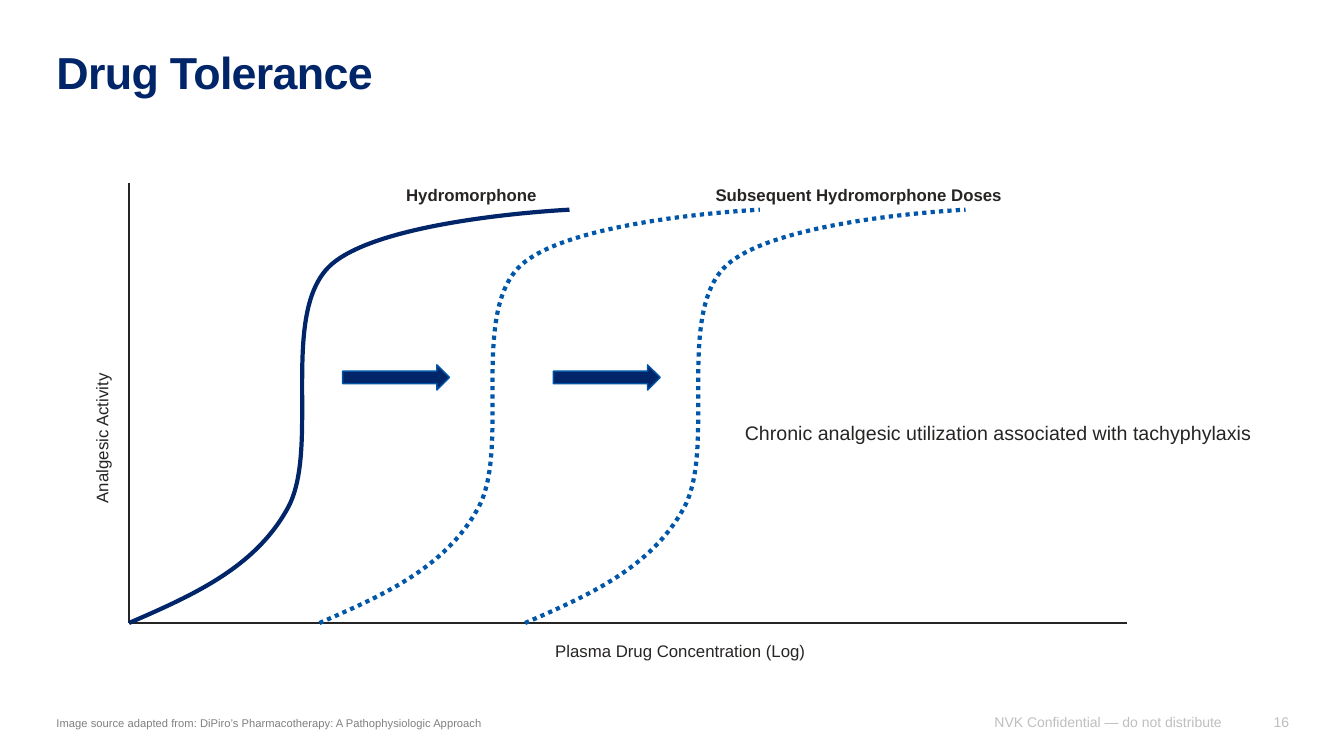
from dataclasses import dataclass

from pptx import Presentation
from pptx.dml.color import RGBColor
from pptx.enum.dml import MSO_LINE
from pptx.enum.shapes import MSO_CONNECTOR, MSO_SHAPE
from pptx.enum.text import MSO_ANCHOR, MSO_AUTO_SIZE, PP_ALIGN
from pptx.oxml.ns import qn
from pptx.oxml.xmlchemy import OxmlElement
from pptx.util import Pt

STRAIGHT = MSO_CONNECTOR.STRAIGHT
RIGHT_ARROW = MSO_SHAPE.RIGHT_ARROW
DOTTED = MSO_LINE.ROUND_DOT
TOP, BOTTOM = MSO_ANCHOR.TOP, MSO_ANCHOR.BOTTOM
LEFT, RIGHT = PP_ALIGN.LEFT, PP_ALIGN.RIGHT
NO_AUTOFIT = MSO_AUTO_SIZE.NONE


@dataclass(frozen=True)
class Theme:
    font: str = "Arial"
    navy: RGBColor = RGBColor(0x00, 0x25, 0x69)
    blue: RGBColor = RGBColor(0x00, 0x56, 0xA8)
    arrow_edge: RGBColor = RGBColor(0x00, 0x55, 0xA6)
    ink: RGBColor = RGBColor(0x27, 0x25, 0x24)
    source_gray: RGBColor = RGBColor(0x80, 0x80, 0x80)
    footer_gray: RGBColor = RGBColor(0xBF, 0xBF, 0xBF)
    title_size: int = 32
    message_size: int = 14
    label_size: int = 12
    footer_size: int = 10
    source_size: int = 8


THEME = Theme()
ORIGIN_X, BASE_Y = 92.2, 445
AXIS_TOP, AXIS_RIGHT = 131, 805
CURVE_CONTROLS = [
    (44.6, -19.4), (89.3, -38.9), (113, -81.4),
    (136.8, -123.1), (108, -217.4), (141.8, -253.4),
    (175, -288.7), (314.6, -295.2), (314.6, -295.2),
]


def place(shape, left, top, width, height):
    shape.left, shape.top = Pt(left), Pt(top)
    shape.width, shape.height = Pt(width), Pt(height)


def set_text(shape, text, size, color, bold=False, align=LEFT):
    shape.text_frame.text = text
    paragraph = shape.text_frame.paragraphs[0]
    paragraph.alignment = align
    font = paragraph.runs[0].font
    font.name, font.size, font.bold = THEME.font, Pt(size), bold
    font.color.rgb = color
    return paragraph


def fit_frame(shape, anchor):
    frame = shape.text_frame
    frame.word_wrap = True
    frame.auto_size = NO_AUTOFIT
    frame.vertical_anchor = anchor
    frame.margin_left = frame.margin_top = 0
    frame.margin_right = frame.margin_bottom = 0


def fill_title(title, text):
    place(title, 40.3, 36, 880.6, 44)
    fit_frame(title, TOP)
    paragraph = set_text(title, text, THEME.title_size, THEME.navy, bold=True)
    paragraph.line_spacing = 0.9
    paragraph.runs[0].font._element.set("spc", "-50")


def fill_source(body, text):
    place(body, 40.3, 502, 349.2, 19.4)
    fit_frame(body, BOTTOM)
    body.text_frame.text = text
    properties = body.text_frame.paragraphs[0]._p.get_or_add_pPr()
    properties.set("marL", "0")
    properties.set("indent", "0")
    properties.append(OxmlElement("a:buNone"))
    paragraph = body.text_frame.paragraphs[0]
    paragraph.space_before, paragraph.space_after = Pt(0), Pt(6)
    paragraph.alignment = LEFT
    font = paragraph.runs[0].font
    font.name, font.size = THEME.font, Pt(THEME.source_size)
    font.color.rgb = THEME.source_gray


def add_footer(slide, text, left, width):
    footer = slide.shapes.add_textbox(Pt(left), Pt(502.6), Pt(width), Pt(19.4))
    fit_frame(footer, BOTTOM)
    set_text(footer, text, THEME.footer_size, THEME.footer_gray, align=RIGHT)


def add_label(slide, text, left, top, width, size=THEME.label_size,
              bold=False, rotation=0):
    label = slide.shapes.add_textbox(
        Pt(left), Pt(top), Pt(width), Pt(size * 1.2 + 7.2))
    label.text_frame.word_wrap = True
    label.rotation = rotation
    set_text(label, text, size, THEME.ink, bold)


def add_axis(slide, end_x, end_y):
    axis = slide.shapes.add_connector(
        STRAIGHT, Pt(ORIGIN_X), Pt(BASE_Y), Pt(end_x), Pt(end_y))
    axis.line.color.rgb = THEME.ink
    axis.line.width = Pt(1.5)
    axis._element.spPr.append(OxmlElement("a:effectLst"))


def add_dose_curve(slide, start_x, color, dash=None):
    builder = slide.shapes.build_freeform(Pt(start_x), Pt(BASE_Y))
    builder.add_line_segments(
        [(Pt(start_x + dx), Pt(BASE_Y + dy)) for dx, dy in CURVE_CONTROLS],
        close=False)
    curve = builder.convert_to_shape()
    segments = list(curve._element.iter(qn("a:lnTo")))
    for first in range(0, len(segments), 3):
        bezier = OxmlElement("a:cubicBezTo")
        segments[first].addprevious(bezier)
        for segment in segments[first:first + 3]:
            bezier.append(segment[0])
            segment.getparent().remove(segment)
    curve.shadow.inherit = False
    curve.fill.background()
    curve.line.color.rgb = color
    curve.line.width = Pt(3)
    if dash is not None:
        curve.line.dash_style = dash


def add_shift_arrow(slide, left):
    arrow = slide.shapes.add_shape(
        RIGHT_ARROW, Pt(left), Pt(260.6), Pt(76.3), Pt(18))
    arrow.shadow.inherit = False
    arrow.fill.solid()
    arrow.fill.fore_color.rgb = THEME.navy
    arrow.line.color.rgb = THEME.arrow_edge
    arrow.line.width = Pt(1)


def main():
    deck = Presentation()
    deck.slide_width, deck.slide_height = Pt(960), Pt(540)
    slide = deck.slides.add_slide(deck.slide_layouts[1])

    fill_title(slide.shapes.title, "Drug Tolerance")
    fill_source(
        slide.placeholders[1],
        "Image source adapted from: DiPiro’s Pharmacotherapy: "
        "A Pathophysiologic Approach")
    add_footer(slide, "NVK Confidential — do not distribute", 696.2, 176.4)
    add_footer(slide, "16", 884.9, 36)

    add_axis(slide, ORIGIN_X, AXIS_TOP)
    add_axis(slide, AXIS_RIGHT, BASE_Y)
    add_label(slide, "Analgesic Activity", -2.9, 280.1, 151.2, rotation=270)
    add_label(slide, "Plasma Drug Concentration (Log)", 389.5, 454.3, 229)

    add_dose_curve(slide, ORIGIN_X, THEME.navy)
    for start_x in (228.2, 375.1):
        add_dose_curve(slide, start_x, THEME.blue, DOTTED)
    for left in (244.8, 395.3):
        add_shift_arrow(slide, left)

    add_label(slide, "Hydromorphone", 283, 128.2, 123.8, bold=True)
    add_label(slide, "Subsequent Hydromorphone Doses", 504, 128.5, 229,
              bold=True)
    add_label(slide, "Chronic analgesic utilization associated with tachyphylaxis",
              524.9, 297.4, 389.5, size=THEME.message_size)
    deck.save("out.pptx")


if __name__ == "__main__":
    main()
